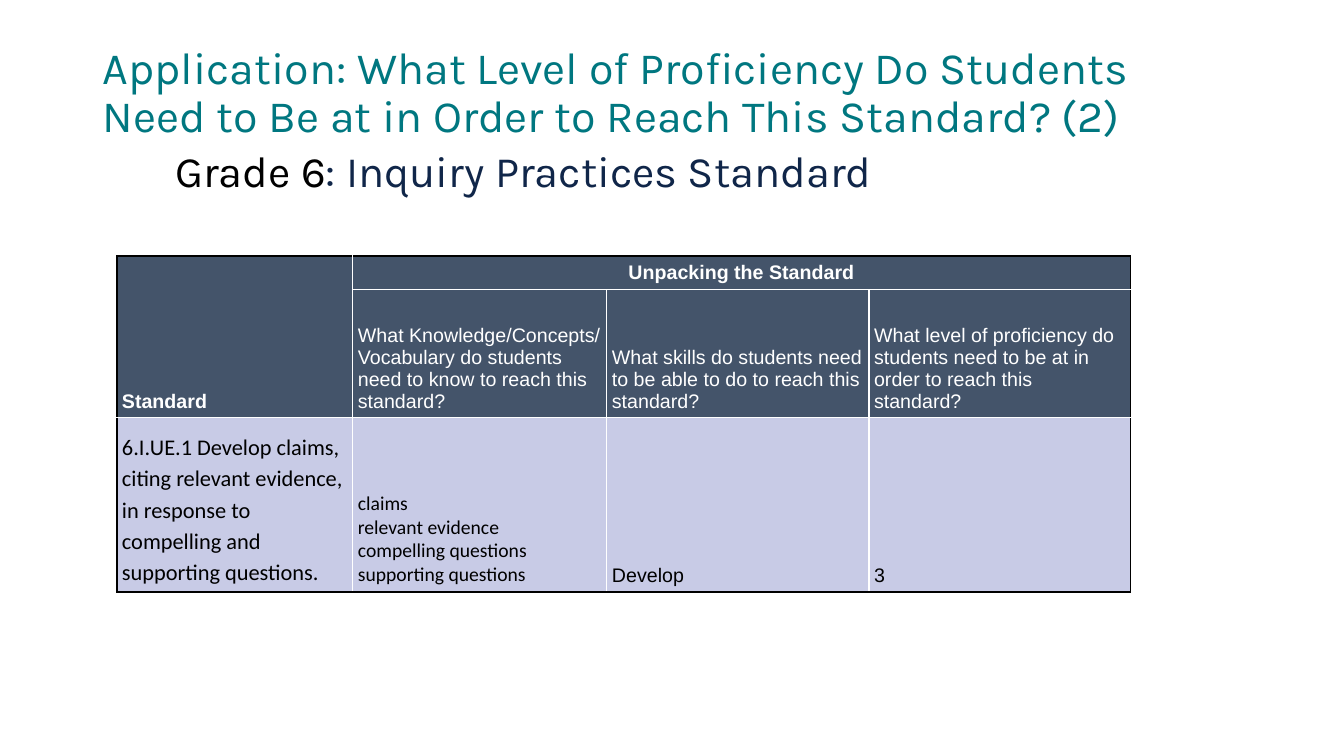
from lxml.etree import SubElement
from pptx import Presentation
from pptx.dml.color import RGBColor
from pptx.enum.text import MSO_ANCHOR, PP_ALIGN
from pptx.oxml.ns import qn
from pptx.util import Inches, Pt

TEAL = RGBColor(0x00, 0x77, 0x80)
NAVY = RGBColor(0x10, 0x26, 0x49)
SLATE = RGBColor(0x44, 0x54, 0x6A)
LAVENDER = RGBColor(0xC8, 0xCB, 0xE6)
BLACK = RGBColor(0, 0, 0)
WHITE = RGBColor(0xFF, 0xFF, 0xFF)

TITLE = ("Application: What Level of Proficiency Do Students Need to Be at "
         "in Order to Reach This Standard? (2)")
SUBTITLE = [("Grade 6", BLACK), (": Inquiry Practices Standard", NAVY)]

COLUMN_WIDTHS = [2.34, 2.52, 2.6, 2.59]
ROW_HEIGHTS = [0.33, 1.27, 1.73]
MERGES = [((0, 0), (1, 0)), ((0, 1), (0, 3))]
# (row, column): (lines, font, size, bold)
CELLS = {
    (0, 0): (["Standard"], "Arial", 14, True),
    (0, 1): (["Unpacking the Standard"], "Arial", 14, True),
    (1, 1): (["What Knowledge/Concepts/ Vocabulary do students need to know "
              "to reach this standard?"], "Arial", 14, False),
    (1, 2): (["What skills do students need to be able to do to reach this "
              "standard?"], "Arial", 14, False),
    (1, 3): (["What level of proficiency do students need to be at in order "
              "to reach this standard?"], "Arial", 14, False),
    (2, 0): (["6.I.UE.1 Develop claims, citing relevant evidence, in response "
              "to compelling and supporting questions."], "Calibri", 16, False),
    (2, 1): (["claims", "relevant evidence", "compelling questions",
              "supporting questions"], "Calibri", 14, False),
    (2, 2): (["Develop"], "Arial", 14, False),
    (2, 3): (["3"], "Arial", 14, False),
}


def add_run(paragraph, text, font, size, color, bold=False):
    run = paragraph.add_run()
    run.text = text
    run.font.name = font
    run.font.size = Pt(size)
    run.font.bold = bold
    run.font.color.rgb = color


def place(shape, left, top, width, height):
    shape.left, shape.top = Inches(left), Inches(top)
    shape.width, shape.height = Inches(width), Inches(height)


def set_borders(cell, row, column):
    """Black on the outer edges of the table, white inside."""
    outer_edges = {
        "a:lnL": column == 0,
        "a:lnR": column + cell.span_width == len(COLUMN_WIDTHS),
        "a:lnT": row == 0,
        "a:lnB": row + cell.span_height == len(ROW_HEIGHTS),
    }
    properties = cell._tc.get_or_add_tcPr()
    for tag, is_outer in outer_edges.items():
        line = SubElement(properties, qn(tag), w=str(Pt(1)))
        fill = SubElement(line, qn("a:solidFill"))
        SubElement(fill, qn("a:srgbClr"), val=str(BLACK if is_outer else WHITE))


def add_heading(slide):
    title = slide.shapes.title
    place(title, 0.92, 0.4, 11.5, 1.45)
    frame = title.text_frame
    frame.word_wrap = True
    frame.vertical_anchor = MSO_ANCHOR.TOP
    paragraph = frame.paragraphs[0]
    paragraph.alignment = PP_ALIGN.LEFT
    paragraph.line_spacing = 0.9
    add_run(paragraph, TITLE, "Karla", 32, TEAL)


def add_subtitle(slide):
    box = slide.shapes.add_textbox(Inches(1.64), Inches(1.44),
                                   Inches(10.05), Inches(5.12))
    box.text_frame.word_wrap = True
    paragraph = box.text_frame.paragraphs[0]
    paragraph.line_spacing = 0.9
    for text, color in SUBTITLE:
        add_run(paragraph, text, "Karla", 31, color)


def add_standards_table(slide):
    frame = slide.shapes.add_table(
        len(ROW_HEIGHTS), len(COLUMN_WIDTHS), Inches(1.16), Inches(2.54),
        Inches(sum(COLUMN_WIDTHS)), Inches(sum(ROW_HEIGHTS)))
    table = frame.table
    for column, width in zip(table.columns, COLUMN_WIDTHS):
        column.width = Inches(width)
    for row, height in zip(table.rows, ROW_HEIGHTS):
        row.height = Inches(height)
    for first, last in MERGES:
        table.cell(*first).merge(table.cell(*last))

    for row in range(len(ROW_HEIGHTS)):
        is_header = row < 2
        for column in range(len(COLUMN_WIDTHS)):
            cell = table.cell(row, column)
            set_borders(cell, row, column)
            cell.fill.solid()
            cell.fill.fore_color.rgb = SLATE if is_header else LAVENDER
            cell.margin_left = cell.margin_right = Inches(0.05)
            cell.margin_top = cell.margin_bottom = Inches(0.05)
            cell.vertical_anchor = MSO_ANCHOR.BOTTOM
            if (row, column) not in CELLS:
                continue
            lines, font, size, bold = CELLS[row, column]
            for index, line in enumerate(lines):
                text_frame = cell.text_frame
                paragraph = (text_frame.add_paragraph() if index
                             else text_frame.paragraphs[0])
                add_run(paragraph, line, font, size,
                        WHITE if is_header else BLACK, bold)

    unpacking = table.cell(0, 1)
    unpacking.vertical_anchor = MSO_ANCHOR.MIDDLE
    unpacking.text_frame.paragraphs[0].alignment = PP_ALIGN.CENTER
    table.cell(2, 0).text_frame.paragraphs[0].line_spacing = 1.15


def main():
    presentation = Presentation()
    presentation.slide_width = Inches(13.33)
    presentation.slide_height = Inches(7.5)
    slide = presentation.slides.add_slide(presentation.slide_layouts[5])
    add_heading(slide)
    add_subtitle(slide)
    add_standards_table(slide)
    presentation.save("out.pptx")


if __name__ == "__main__":
    main()
